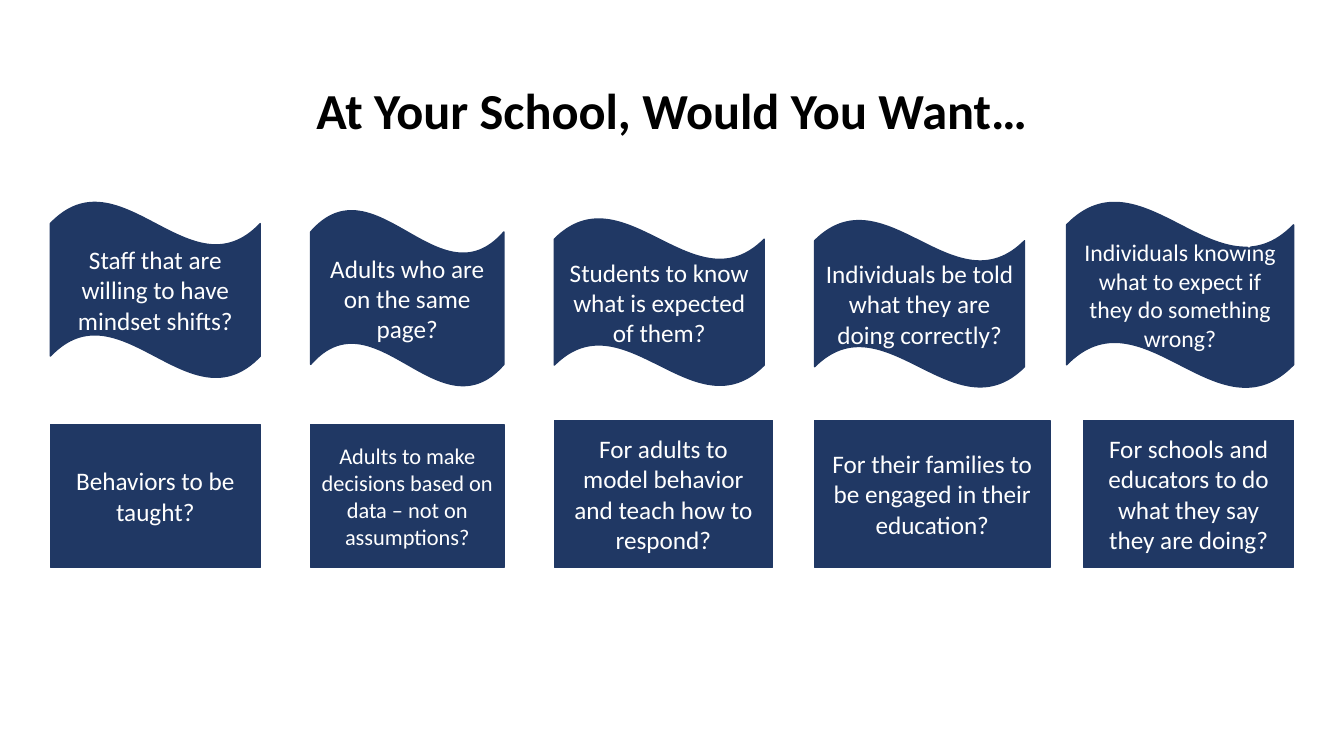
from dataclasses import dataclass

from pptx import Presentation
from pptx.dml.color import RGBColor
from pptx.enum.shapes import MSO_SHAPE
from pptx.enum.text import MSO_ANCHOR, MSO_AUTO_SIZE, PP_ALIGN
from pptx.util import Cm, Pt

WAVE, RECT = MSO_SHAPE.WAVE, MSO_SHAPE.RECTANGLE
MIDDLE, CENTER = MSO_ANCHOR.MIDDLE, PP_ALIGN.CENTER
NO_AUTOFIT = MSO_AUTO_SIZE.NONE
TITLE_ONLY = 5


@dataclass(frozen=True)
class Theme:
    font: str = "Calibri"
    navy: RGBColor = RGBColor(0x20, 0x38, 0x64)
    black: RGBColor = RGBColor(0, 0, 0)
    white: RGBColor = RGBColor(255, 255, 255)
    title: int = 36
    body: int = 18
    snug: int = 17
    small: int = 16


class SlideBuilder:
    def __init__(self, prs, theme):
        self.theme = theme
        self.s = prs.slides.add_slide(prs.slide_layouts[TITLE_ONLY])

    def add_text(self, sp, text, size, color, bold=False):
        tf = sp.text_frame
        tf.word_wrap = True
        tf.auto_size = NO_AUTOFIT
        tf.vertical_anchor = MIDDLE
        p = tf.paragraphs[0]
        p.alignment = CENTER
        r = p.add_run()
        r.text = text
        r.font.name = self.theme.font
        r.font.size = Pt(size)
        r.font.bold = bold
        r.font.color.rgb = color
        return p

    def title(self, text, left, top, width, height):
        sp = self.s.shapes.title
        sp.left, sp.top = Cm(left), Cm(top)
        sp.width, sp.height = Cm(width), Cm(height)
        p = self.add_text(sp, text, self.theme.title, self.theme.black, bold=True)
        p.line_spacing = 0.9

    def card(self, kind, text, size, left, top, width, height):
        sp = self.s.shapes.add_shape(kind, Cm(left), Cm(top), Cm(width), Cm(height))
        sp.shadow.inherit = False
        sp.fill.solid()
        sp.fill.fore_color.rgb = self.theme.navy
        sp.line.color.rgb = self.theme.navy
        sp.line.width = Pt(1)
        self.add_text(sp, text, size, self.theme.white)


def main():
    prs = Presentation()
    prs.slide_width, prs.slide_height = Cm(33.87), Cm(19.05)
    theme = Theme()
    slide = SlideBuilder(prs, theme)

    # Title
    slide.title("At Your School, Would You Want…", 2.33, 1.02, 29.21, 3.68)

    # Upper row: text, size, left, top, width, height
    waves = [
        ("Staff that are willing to have mindset shifts?",
         theme.body, 1.27, 5.08, 5.29, 4.45),
        ("Adults who are on the same page?",
         theme.body, 7.83, 5.29, 4.87, 4.45),
        ("Students to know what is expected of them?",
         theme.body, 13.97, 5.5, 5.29, 4.23),
        ("Individuals be told what they are doing correctly?",
         theme.body, 20.53, 5.54, 5.29, 4.23),
        ("Individuals knowing what to expect if they do something wrong?",
         theme.snug, 26.88, 5.08, 5.72, 4.7),
    ]
    for wave in waves:
        slide.card(WAVE, *wave)

    # Lower row, standing on a common bottom edge: text, size, left, top, width
    bottom = 14.3
    boxes = [
        ("Behaviors to be taught?", theme.body, 1.27, 10.7, 5.29),
        ("Adults to make decisions based on data – not on assumptions?",
         theme.small, 7.83, 10.7, 4.87),
        ("For adults to model behavior and teach how to respond?",
         theme.body, 13.97, 10.59, 5.5),
        ("For their families to be engaged in their education?",
         theme.body, 20.53, 10.59, 5.93),
        ("For schools and educators to do what they say they are doing?",
         theme.body, 27.31, 10.59, 5.29),
    ]
    for text, size, left, top, width in boxes:
        slide.card(RECT, text, size, left, top, width, bottom - top)

    prs.save("out.pptx")


if __name__ == "__main__":
    main()
